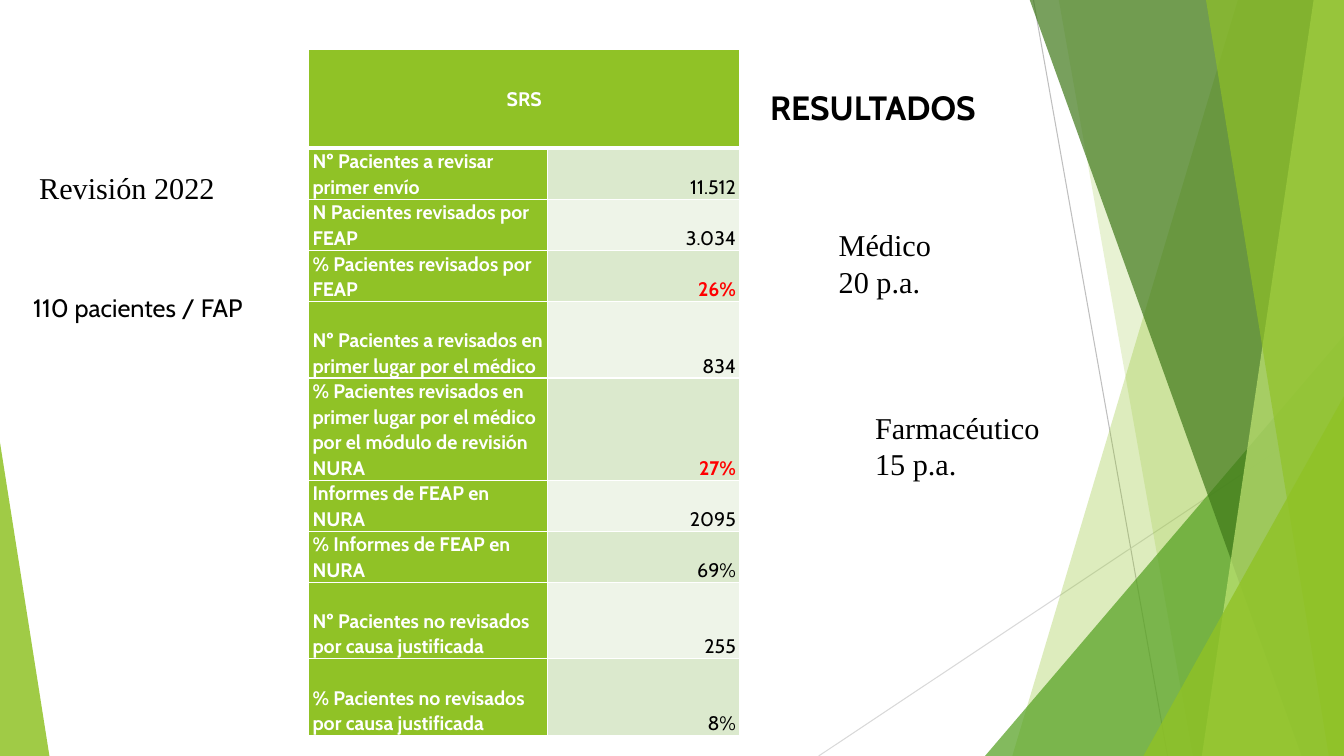
from dataclasses import dataclass

from lxml import etree
from pptx import Presentation
from pptx.dml.color import RGBColor
from pptx.enum.shapes import MSO_CONNECTOR, MSO_SHAPE
from pptx.enum.text import MSO_ANCHOR, PP_ALIGN
from pptx.oxml.ns import qn
from pptx.util import Emu, Pt

STRAIGHT = MSO_CONNECTOR.STRAIGHT
TRIANGLE = MSO_SHAPE.ISOSCELES_TRIANGLE
MIDDLE, BOTTOM = MSO_ANCHOR.MIDDLE, MSO_ANCHOR.BOTTOM
LEFT, CENTER, RIGHT = PP_ALIGN.LEFT, PP_ALIGN.CENTER, PP_ALIGN.RIGHT

SCALE = 9144
WIDTH, HEIGHT = 1333, 750


@dataclass(frozen=True)
class Theme:
    green: str = "90C226"
    mid_green: str = "54A021"
    dark_green: str = "3F7819"
    lime: str = "C0E474"
    bands: tuple = ("DBE9CD", "EEF4E8")
    white: str = "FFFFFF"
    black: str = "000000"
    red: str = "FF0000"
    gray: str = "BFBFBF"
    light_gray: str = "D9D9D9"
    sans: str = "Cabin"
    serif: str = "Times New Roman"
    title: float = 24
    note: float = 21.6
    body: float = 18
    cell: float = 14


def px(n):
    return Emu(n * SCALE)


class Deck:
    def __init__(self, theme):
        self.theme = theme
        self.prs = Presentation()
        self.prs.slide_width, self.prs.slide_height = px(WIDTH), px(HEIGHT)
        self.s = self.prs.slides.add_slide(self.prs.slide_layouts[6])

    def line(self, x1, y1, x2, y2, color):
        c = self.s.shapes.add_connector(STRAIGHT, px(x1), px(y1), px(x2), px(y2))
        c.line.color.rgb = RGBColor.from_string(color)
        c.line.width = Pt(0.75)
        etree.SubElement(c._element.spPr, qn("a:effectLst"))

    def paint(self, sp, color, opacity):
        sp.shadow.inherit = False
        sp.line.fill.background()
        sp.fill.solid()
        sp.fill.fore_color.rgb = RGBColor.from_string(color)
        clr = sp._element.spPr.find(qn("a:solidFill"))[0]
        etree.SubElement(clr, qn("a:alpha"), val=str(opacity * 1000))

    def facet(self, top, bottom, color, opacity):
        fb = self.s.shapes.build_freeform(top, -1, scale=SCALE)
        fb.add_line_segments([(WIDTH, -1), (WIDTH, HEIGHT), (bottom, HEIGHT)])
        self.paint(fb.convert_to_shape(), color, opacity)

    def triangle(self, x, y, w, apex, color, opacity):
        sp = self.s.shapes.add_shape(TRIANGLE, px(x), px(y), px(w), px(HEIGHT - y))
        sp.adjustments[0] = apex
        self.paint(sp, color, opacity)

    def style(self, p, font, size, color, bold=False):
        for r in p.runs:
            r.font.name, r.font.size, r.font.bold = font, Pt(size), bold
            r.font.color.rgb = RGBColor.from_string(color)

    def text(self, x, y, w, h, text, font, size, bold=False):
        tf = self.s.shapes.add_textbox(px(x), px(y), px(w), px(h)).text_frame
        tf.word_wrap = True
        tf.text = text
        for p in tf.paragraphs:
            self.style(p, font, size, self.theme.black, bold)

    def border(self, cell, top, bottom):
        tcPr = cell._tc.get_or_add_tcPr()
        for side, width in zip("LRTB", (1, 1, top, bottom)):
            ln = etree.SubElement(tcPr, qn(f"a:ln{side}"), w=str(Pt(width)))
            fill = etree.SubElement(ln, qn("a:solidFill"))
            etree.SubElement(fill, qn("a:srgbClr"), val=self.theme.white)

    def cell(self, cell, text, fill, color, bold, align, anchor=BOTTOM, top=1, bottom=1):
        self.border(cell, top, bottom)
        cell.fill.solid()
        cell.fill.fore_color.rgb = RGBColor.from_string(fill)
        cell.margin_left = cell.margin_right = px(4)
        cell.margin_top = cell.margin_bottom = 0
        cell.vertical_anchor = anchor
        cell.text_frame.text = text
        p = cell.text_frame.paragraphs[0]
        p.alignment, p.line_spacing = align, 1.07
        self.style(p, self.theme.sans, self.theme.cell, color, bold)

    def table(self, x, y, widths, heights, header, rows):
        t = self.theme
        tbl = self.s.shapes.add_table(
            len(heights), len(widths), px(x), px(y), px(sum(widths)), px(sum(heights))
        ).table
        tbl.first_row = tbl.horz_banding = False
        for col, w in zip(tbl.columns, widths):
            col.width = px(w)
        for row, h in zip(tbl.rows, heights):
            row.height = px(h)
        tbl.cell(0, 0).merge(tbl.cell(0, 1))
        self.cell(tbl.cell(0, 0), header, t.green, t.white, True, CENTER, MIDDLE, bottom=3)
        for i, (label, value, key) in enumerate(rows):
            top = 1 if i else 3
            color = t.red if key else t.black
            self.cell(tbl.cell(i + 1, 0), label, t.green, t.white, True, LEFT, top=top)
            self.cell(tbl.cell(i + 1, 1), value, t.bands[i % 2], color, key, RIGHT, top=top)


def main():
    t = Theme()
    d = Deck(t)

    d.line(1025, 0, 1158, HEIGHT, t.gray)
    d.line(WIDTH, 403, 812, HEIGHT, t.light_gray)
    d.facet(1228, 1004, t.green, 30)
    d.facet(1050, 1183, t.green, 20)
    d.triangle(977, 333, 356, 1, t.mid_green, 72)
    d.facet(1021, 1291, t.dark_green, 70)
    d.facet(1303, 1192, t.lime, 70)
    d.facet(1196, 1318, t.green, 65)
    d.triangle(1134, 393, 199, 1, t.green, 80)
    d.triangle(0, 439, 49, 0, t.green, 85)

    rows = [
        ("Nº Pacientes a revisar primer envío", "11.512", False),
        ("N Pacientes revisados por FEAP", "3.034", False),
        ("% Pacientes revisados por FEAP", "26%", True),
        ("Nº Pacientes a revisados en primer lugar por el médico", "834", False),
        ("% Pacientes revisados en primer lugar por el médico "
         "por el módulo de revisión NURA", "27%", True),
        ("Informes de FEAP en NURA", "2095", False),
        ("% Informes de FEAP en NURA", "69%", False),
        ("Nº Pacientes no revisados por causa justificada", "255", False),
        ("% Pacientes no revisados por causa justificada", "8%", False),
    ]
    heights = [98, 50, 50, 50, 76, 101, 50, 50, 76, 76]
    d.table(306, 49, [237, 191], heights, "SRS", rows)

    d.text(29, 163, 220, 46, "Revisión 2022", t.serif, t.note)
    d.text(822, 220, 170, 83, "Médico\n20 p.a.", t.serif, t.note)
    d.text(858, 401, 189, 83, "Farmacéutico\n15 p.a.", t.serif, t.note)
    d.text(754, 81, 230, 50, "RESULTADOS", t.sans, t.title, True)
    d.text(23, 285, 255, 40, "110 pacientes / FAP", t.sans, t.body)

    d.prs.save("out.pptx")


if __name__ == "__main__":
    main()
